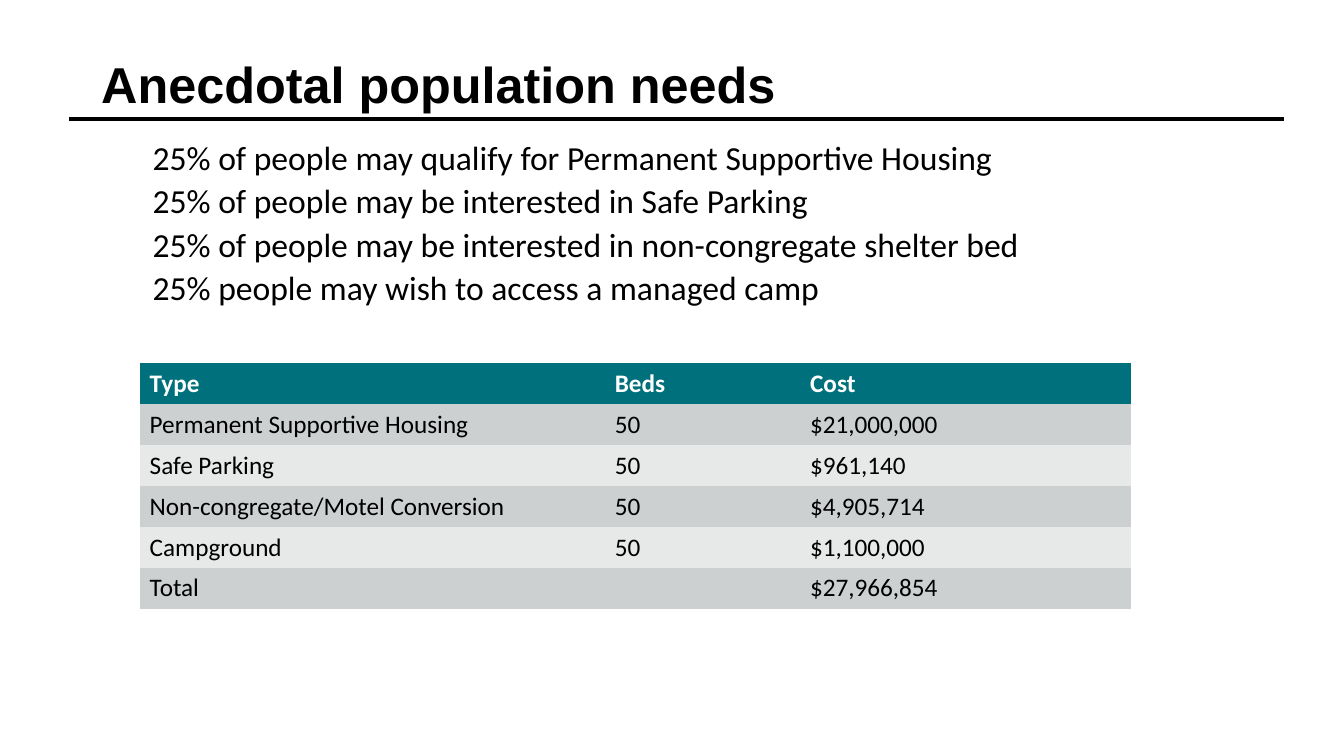
from dataclasses import dataclass

from lxml.etree import SubElement
from pptx import Presentation
from pptx.dml.color import RGBColor
from pptx.enum.shapes import MSO_CONNECTOR
from pptx.enum.text import MSO_ANCHOR
from pptx.oxml.ns import qn
from pptx.slide import Slide
from pptx.text.text import TextFrame
from pptx.util import Emu, Pt

EMU_PER_PX = 9525
NO_STYLE_NO_GRID = "{2D5ABB26-0587-4C30-8999-92F81FD0307C}"


@dataclass(frozen=True)
class Theme:
    ink: str = "000000"
    header_ink: str = "FFFFFF"
    header_fill: str = "00717C"
    band_fills: tuple[str, str] = ("CCD0D1", "E7E9E9")
    title_font: str = "Arial"
    body_font: str = "Calibri"
    title_size: int = 36
    body_size: int = 24
    table_size: int = 18
    rule_width: int = 3


@dataclass(frozen=True)
class Box:
    left: int
    top: int
    width: int
    height: int

    def emu(self) -> tuple[Emu, ...]:
        return tuple(px(n) for n in (self.left, self.top, self.width, self.height))


@dataclass(frozen=True)
class CostRow:
    housing_type: str
    beds: str
    cost: str


THEME = Theme()
TITLE_BOX = Box(87, 52, 1104, 62)
BODY_BOX = Box(88, 130, 1103, 484)
COLUMN_WIDTHS = (443, 186, 315)
ROW_HEIGHT = 39

NEEDS = (
    "25% of people may qualify for Permanent Supportive Housing",
    "25% of people may be interested in Safe Parking",
    "25% of people may be interested in non-congregate shelter bed",
    "25% people may wish to access a managed camp",
)
COSTS = (
    CostRow("Type", "Beds", "Cost"),
    CostRow("Permanent Supportive Housing", "50", "$21,000,000"),
    CostRow("Safe Parking", "50", "$961,140"),
    CostRow("Non-congregate/Motel Conversion", "50", "$4,905,714"),
    CostRow("Campground", "50", "$1,100,000"),
    CostRow("Total", "", "$27,966,854"),
)


def px(length: int) -> Emu:
    return Emu(length * EMU_PER_PX)


def write(frame: TextFrame, *lines: str, size: int, font: str = THEME.body_font,
          color: str = THEME.ink, bold: bool = False, level: int = 0, indent: int = 0,
          line_spacing: float = 1.0, space_before: int = 0) -> None:
    """Put one paragraph per line into the frame."""
    for index, line in enumerate(lines):
        paragraph = frame.add_paragraph() if index else frame.paragraphs[0]
        paragraph.level = level
        paragraph.line_spacing = line_spacing
        paragraph.space_before = Pt(space_before if index else 0)
        if indent:
            properties = paragraph._p.get_or_add_pPr()
            properties.set("marL", str(px(indent)))
            properties.set("indent", "0")
        if line:
            paragraph.add_run().text = line
        paragraph.font.size = Pt(size)
        paragraph.font.name = font
        paragraph.font.bold = bold
        paragraph.font.color.rgb = RGBColor.from_string(color)


def add_text_frame(slide: Slide, box: Box, anchor: MSO_ANCHOR) -> TextFrame:
    frame = slide.shapes.add_textbox(*box.emu()).text_frame
    frame.word_wrap = True
    frame.vertical_anchor = anchor
    return frame


def add_title_rule(slide: Slide) -> None:
    rule = slide.shapes.add_connector(
        MSO_CONNECTOR.STRAIGHT, px(1223), px(113), px(66), px(113))
    rule.line.color.rgb = RGBColor.from_string(THEME.ink)
    rule.line.width = Pt(THEME.rule_width)
    SubElement(rule._element.spPr, qn("a:effectLst"))


def add_cost_table(slide: Slide) -> None:
    box = Box(133, 346, sum(COLUMN_WIDTHS), ROW_HEIGHT * len(COSTS))
    table = slide.shapes.add_table(len(COSTS), len(COLUMN_WIDTHS), *box.emu()).table
    table._tbl.tblPr.find(qn("a:tableStyleId")).text = NO_STYLE_NO_GRID
    for column, width in zip(table.columns, COLUMN_WIDTHS):
        column.width = px(width)
    for index, (row, entry) in enumerate(zip(table.rows, COSTS)):
        row.height = px(ROW_HEIGHT)
        header = index == 0
        fill = THEME.header_fill if header else THEME.band_fills[(index - 1) % 2]
        for cell, text in zip(row.cells, (entry.housing_type, entry.beds, entry.cost)):
            cell.fill.solid()
            cell.fill.fore_color.rgb = RGBColor.from_string(fill)
            write(cell.text_frame, text, size=THEME.table_size, bold=header,
                  color=THEME.header_ink if header else THEME.ink)


def main() -> None:
    presentation = Presentation()
    presentation.slide_width, presentation.slide_height = px(1280), px(720)
    slide = presentation.slides.add_slide(presentation.slide_layouts[6])
    add_title_rule(slide)
    write(add_text_frame(slide, BODY_BOX, MSO_ANCHOR.TOP), *NEEDS, size=THEME.body_size,
          level=1, indent=48, line_spacing=0.9, space_before=5)
    write(add_text_frame(slide, TITLE_BOX, MSO_ANCHOR.BOTTOM), "Anecdotal population needs",
          size=THEME.title_size, font=THEME.title_font, bold=True, line_spacing=0.9)
    add_cost_table(slide)
    presentation.save("out.pptx")


if __name__ == "__main__":
    main()
